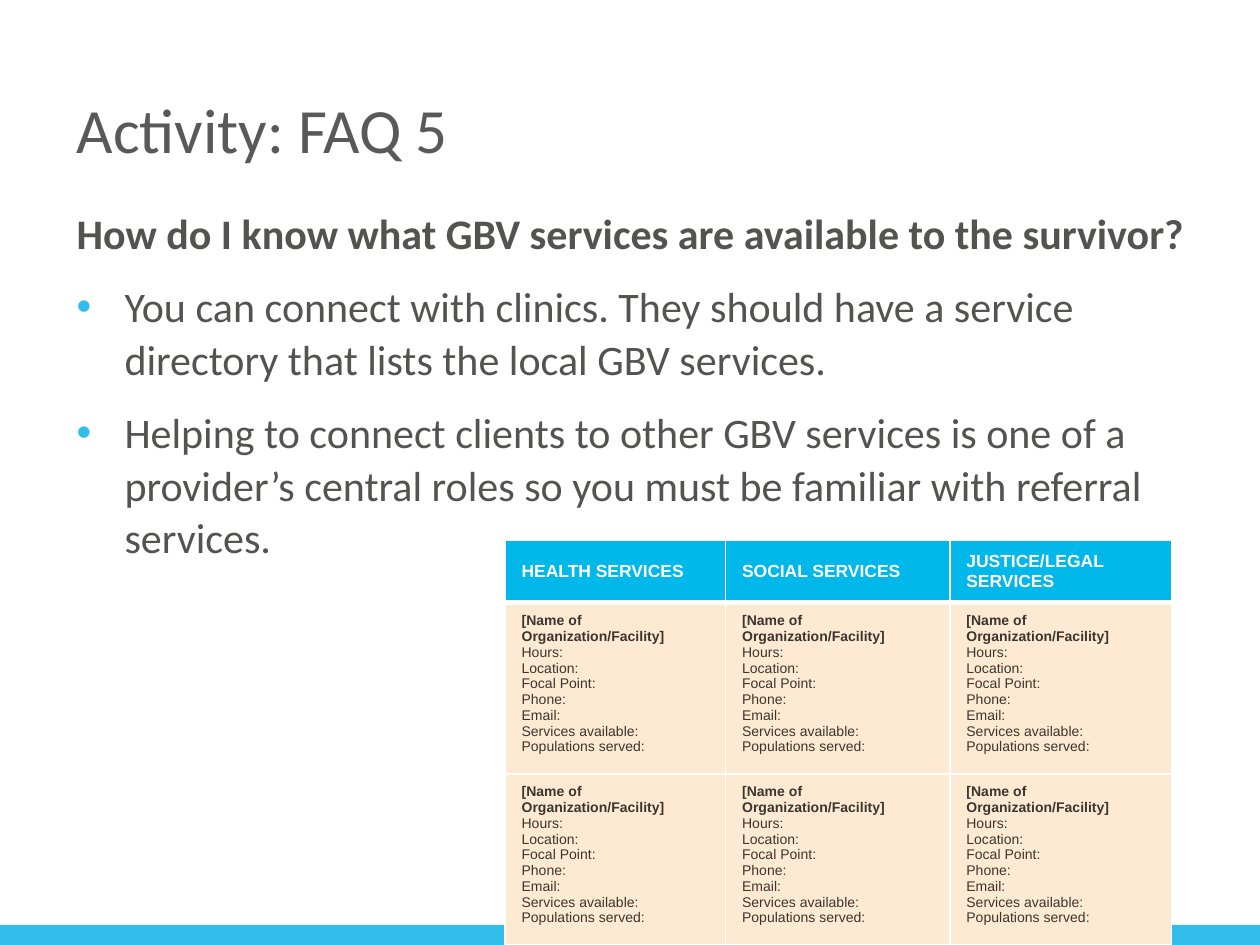
import pptx
import pptx.dml.color
import pptx.enum.shapes
import pptx.enum.text
import pptx.oxml
import pptx.oxml.ns
import pptx.util
from dataclasses import dataclass

Inches = pptx.util.Inches
Pt = pptx.util.Pt
Anchor = pptx.enum.text.MSO_ANCHOR


@dataclass(frozen=True)
class Theme:
    bar: str = "32BDEA"
    head: str = "02B7EA"
    cell: str = "FEEAD2"
    rule: str = "FFFFFF"
    title = dict(name="Calibri", size=Pt(36), color="595959")
    body = dict(name="Calibri", size=Pt(24), color="535352", bold=False)
    lead = dict(body, bold=True)
    label = dict(name="Arial", size=Pt(10), color="FFFFFF", bold=True)
    entry = dict(name="Arial", size=Pt(8), color="3B352F", bold=False)
    name = dict(entry, bold=True)


THEME = Theme()
LEAD = "How do I know what GBV services are available to the survivor?"
POINTS = [
    "You can connect with clinics. They should have a service directory "
    "that lists the local GBV services.",
    "Helping to connect clients to other GBV services is one of a provider’s "
    "central roles so you must be familiar with referral services.",
]
HEADS = ["HEALTH SERVICES", "SOCIAL SERVICES", "JUSTICE/LEGAL SERVICES"]
NAME = "[Name of Organization/Facility]"
FIELDS = ["Hours:", "Location:", "Focal Point:", "Phone:", "Email:",
          "Services available:", "Populations served:"]
COLS = [1.75, 1.78, 1.76]
ROWS = [0.43, 1.21, 1.21]


def rgb(code):
    return pptx.dml.color.RGBColor.from_string(code)


def apply(obj, style):
    for key, value in style.items():
        if key == "color":
            obj.color.rgb = rgb(value)
        else:
            setattr(obj, key, value)


def add_xml(parent, text):
    space = pptx.oxml.ns.nsdecls("a")
    parent.append(pptx.oxml.parse_xml(text.replace(" ", f" {space} ", 1)))


def write(frame, lines):
    """Fill a frame with one paragraph for each (text, style) pair."""
    for i, (text, style) in enumerate(lines):
        para = frame.paragraphs[0] if i == 0 else frame.add_paragraph()
        run = para.add_run()
        run.text = text
        apply(run.font, style)


def add_box(slide, box, anchor):
    frame = slide.shapes.add_textbox(*box).text_frame
    apply(frame, dict(word_wrap=True, vertical_anchor=anchor))
    return frame


def add_bar(slide, box):
    bar = slide.shapes.add_shape(
        pptx.enum.shapes.MSO_SHAPE.RECTANGLE, *box)
    bar.shadow.inherit = False
    bar.fill.solid()
    bar.fill.fore_color.rgb = rgb(THEME.bar)
    bar.line.fill.background()


def add_title(slide, box):
    write(add_box(slide, box, Anchor.MIDDLE),
          [("Activity: FAQ 5", THEME.title)])


def add_bullet(para):
    props = para._p.get_or_add_pPr()
    indent = Inches(0.38)
    props.set("marL", str(indent))
    props.set("indent", str(-indent))
    add_xml(props, f'<a:buClr ><a:srgbClr val="{THEME.bar}"/></a:buClr>')
    add_xml(props, '<a:buFont typeface="Arial"/>')
    add_xml(props, '<a:buChar char="•"/>')


def add_body(slide, box):
    frame = add_box(slide, box, Anchor.TOP)
    write(frame, [(LEAD, THEME.lead)] + [(text, THEME.body) for text in POINTS])
    for i, para in enumerate(frame.paragraphs):
        if i:
            add_bullet(para)
            para.space_before = Pt(12)
        para.line_spacing = Pt(30)


def fill_cell(cell, row, lines):
    head = row == 0
    apply(cell, dict(
        margin_left=Inches(0.13), margin_right=Inches(0.08),
        margin_top=Inches(0.08), margin_bottom=Inches(0.08),
        vertical_anchor=Anchor.MIDDLE if head else Anchor.TOP))
    props = cell._tc.get_or_add_tcPr()
    widths = dict(L=1, R=1, T=3 if row == 1 else 1, B=3 if head else 1)
    for side, width in widths.items():
        add_xml(props, f'<a:ln{side} w="{Pt(width)}"><a:solidFill>'
                f'<a:srgbClr val="{THEME.rule}"/></a:solidFill></a:ln{side}>')
    cell.fill.solid()
    cell.fill.fore_color.rgb = rgb(THEME.head if head else THEME.cell)
    write(cell.text_frame, lines)


def add_grid(slide, box):
    grid = slide.shapes.add_table(len(ROWS), len(COLS), *box).table
    for col, width in zip(grid.columns, COLS):
        col.width = Inches(width)
    for row, height in zip(grid.rows, ROWS):
        row.height = Inches(height)
    entry = [(NAME, THEME.name)] + [(text, THEME.entry) for text in FIELDS]
    for r in range(len(ROWS)):
        for c, head in enumerate(HEADS):
            lines = entry if r else [(head, THEME.label)]
            fill_cell(grid.cell(r, c), r, lines)


def inch_box(*sides):
    return [Inches(side) for side in sides]


def main():
    deck = pptx.Presentation()
    deck.slide_width, deck.slide_height = Inches(10), Inches(7.5)
    slide = deck.slides.add_slide(deck.slide_layouts[6])
    add_bar(slide, inch_box(0, 7.34, 10, 0.2))
    add_title(slide, inch_box(0.51, 0.49, 8.99, 1.06))
    add_body(slide, inch_box(0.51, 1.58, 8.99, 4.57))
    add_grid(slide, inch_box(4.01, 4.29, sum(COLS), sum(ROWS)))
    deck.save("out.pptx")


if __name__ == "__main__":
    main()
